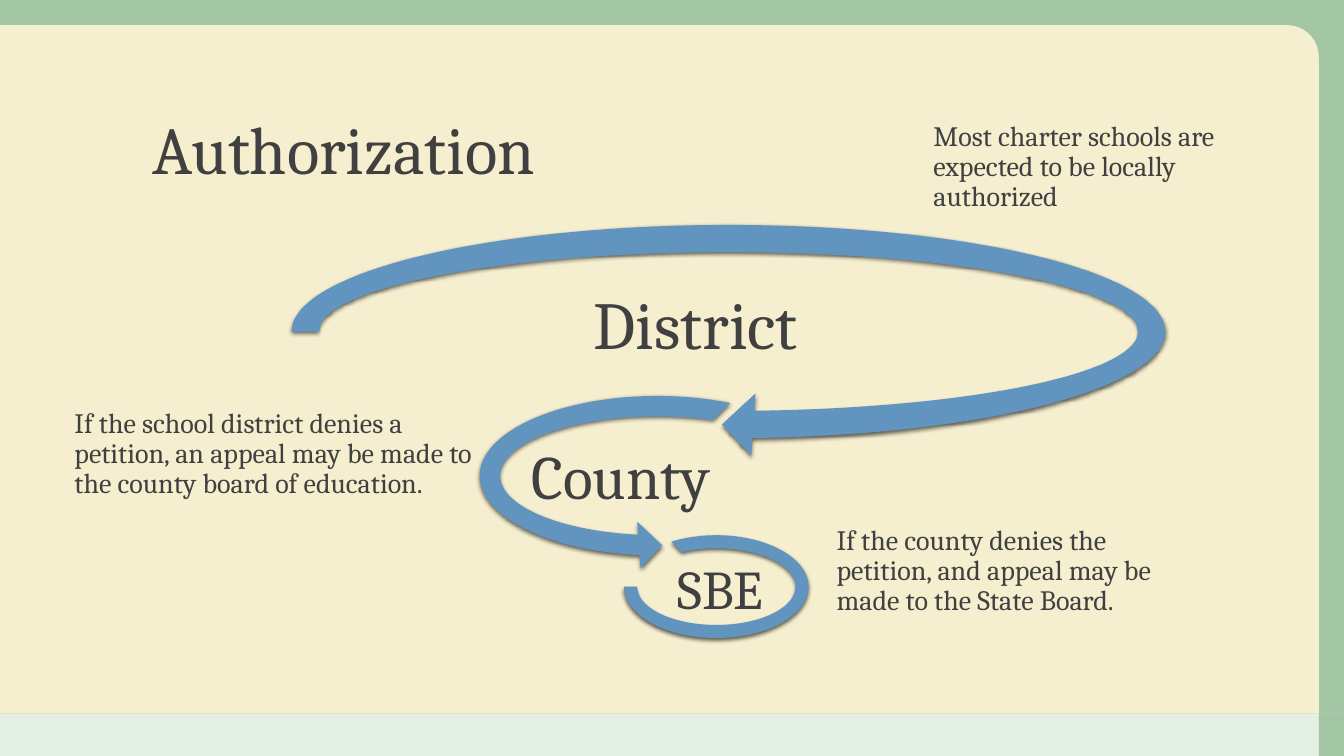
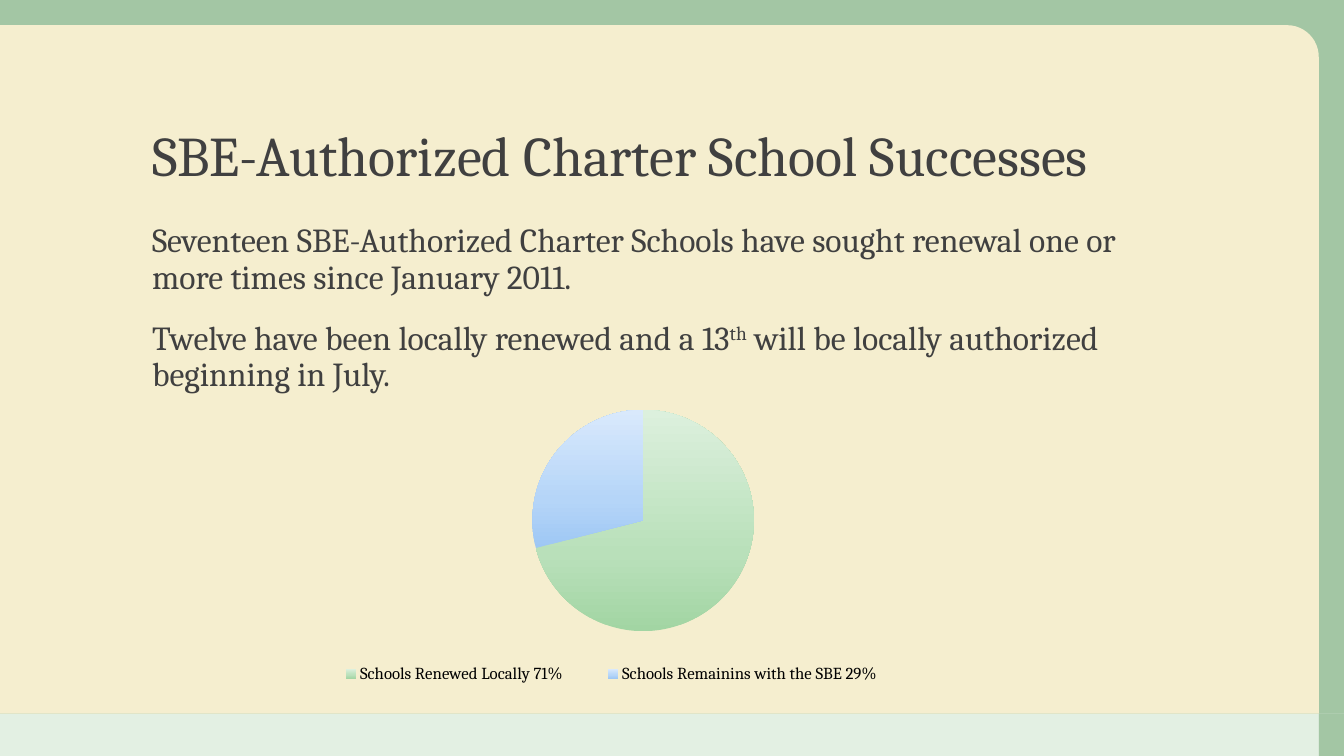
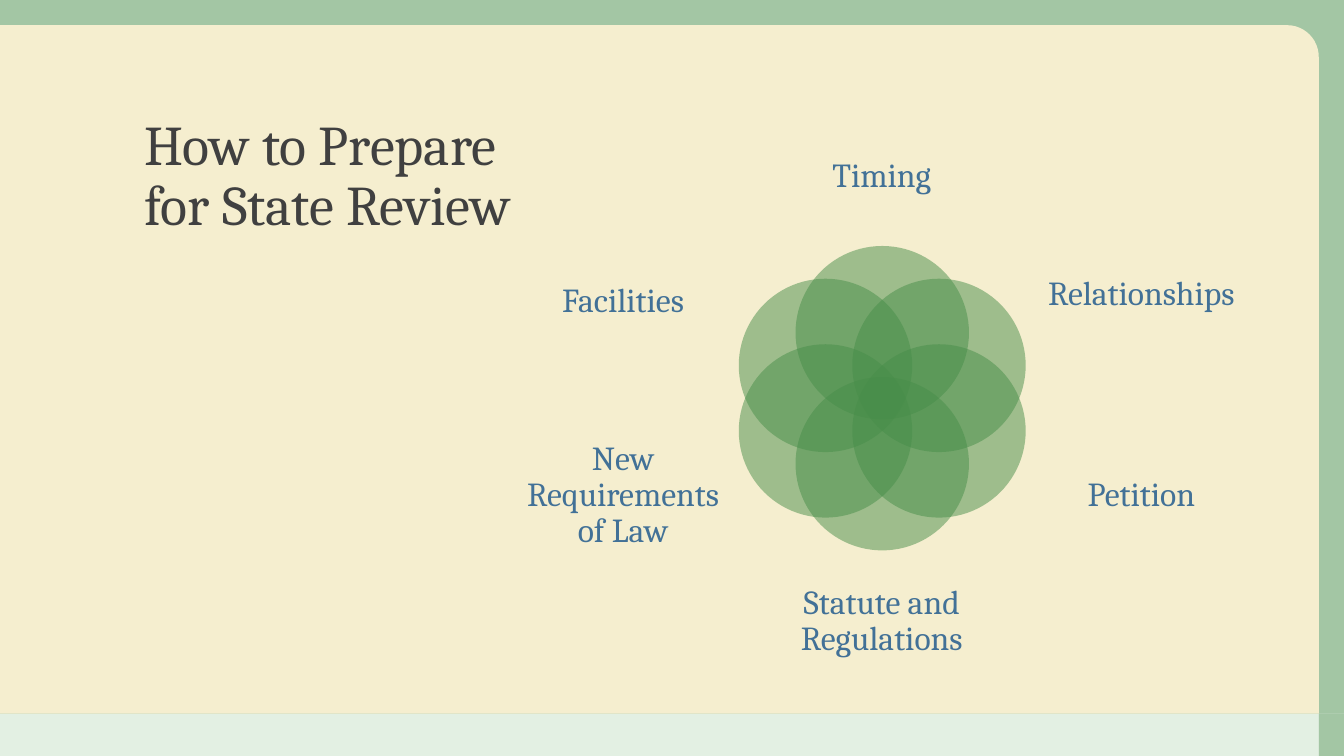
import copy
import math
from dataclasses import dataclass
from typing import Any, NamedTuple, Optional

import pptx
import pptx.chart.data
import pptx.dml.color
import pptx.enum.chart
import pptx.enum.shapes
import pptx.enum.text
import pptx.oxml
import pptx.oxml.ns
import pptx.util

Inches = pptx.util.Inches
Pt = pptx.util.Pt
RGB = pptx.dml.color.RGBColor
qn = pptx.oxml.ns.qn
Preset = pptx.enum.shapes.MSO_SHAPE
Anchor = pptx.enum.text.MSO_ANCHOR
Align = pptx.enum.text.PP_ALIGN
NAMESPACES = pptx.oxml.ns.nsdecls("a")


@dataclass(frozen=True)
class Theme:
    font: str = "Cambria"
    ink: str = "404040"
    label: str = "427197"
    arrow: str = "6195C0"
    green: str = "488E4A"
    mint: str = "D8EBD8"
    paper: str = "F5EECF"
    legend: str = "000000"
    renewed: tuple[str, ...] = ("A2D5A3", "B9E0BA", "DCF0DD")
    remaining: tuple[str, ...] = ("9EC7F4", "B5D5F8", "D9E9FC")
    title_large: float = 48
    title: float = 40
    body: float = 24
    note: float = 20
    legend_size: float = 12
    line_spacing: float = 0.9


THEME = Theme()


class Box(NamedTuple):
    left: float
    top: float
    width: float
    height: float

    def lengths(self) -> tuple[int, ...]:
        return tuple(Inches(side) for side in self)


class Panel(NamedTuple):
    preset: Any
    box: Box
    colour: str
    opacity: int = 100
    adjustments: tuple[float, ...] = ()


class Caption(NamedTuple):
    text: str
    box: Box
    size: float


class Step(NamedTuple):
    sweep: Panel
    name: Caption


FRAME = (
    Panel(Preset.RECTANGLE, Box(0, 7.08, 13.08, 0.42), THEME.mint, 70),
    Panel(Preset.RECTANGLE, Box(13.08, 7.08, 0.25, 0.42), THEME.green, 50),
    Panel(Preset.RECTANGLE, Box(0, 0, 13.33, 7.08), THEME.green, 50),
    Panel(Preset.ROUND_1_RECTANGLE, Box(0, 0.25, 13.08, 6.83), THEME.paper, 100, (0.046,)),
)

STEPS = (
    Step(
        Panel(Preset.CIRCULAR_ARROW, Box(2.72, 2.06, 9.01, 2.46), THEME.arrow,
              adjustments=(0.11, 11.423, 45, 108, 0.125)),
        Caption("District", Box(5.79, 2.78, 2.22, 0.95), 48),
    ),
    Step(
        Panel(Preset.LEFT_CIRCULAR_ARROW, Box(4.63, 3.8, 3.78, 1.84), THEME.arrow,
              adjustments=(0.11, 11.423, 63, 189, 0.125)),
        Caption("County", Box(5.02, 4.36, 2.28, 0.79), 44),
    ),
    Step(
        Panel(Preset.BLOCK_ARC, Box(6.19, 5.31, 1.83, 1.02), THEME.arrow,
              adjustments=(135, 108, 0.127)),
        Caption("SBE", Box(6.51, 5.55, 1.27, 0.64), 39),
    ),
)

NOTES = (
    Caption("If the school district denies a petition, an appeal may be made to "
            "the county board of education.", Box(0.64, 4.01, 4.17, 1.37), THEME.note),
    Caption("If the county denies the petition, and appeal may be made to the State Board.",
            Box(8.2, 5.17, 3.83, 1.01), THEME.note),
    Caption("Most charter schools are expected to be locally authorized",
            Box(9.16, 1.16, 3.5, 1.01), THEME.note),
)

TOPICS = (
    Caption("Timing", Box(7.67, 1.17, 2.15, 1.17), THEME.body),
    Caption("Relationships", Box(10.3, 2.28, 2.04, 1.28), THEME.body),
    Caption("Petition", Box(10.3, 4.2, 2.04, 1.43), THEME.body),
    Caption("Statute and Regulations", Box(7.67, 5.58, 2.15, 1.17), THEME.body),
    Caption("New Requirements of Law", Box(5.16, 4.2, 2.04, 1.43), THEME.body),
    Caption("Facilities", Box(5.16, 2.28, 2.04, 1.43), THEME.body),
)


def style_paragraph(paragraph: Any, size: float, colour: str) -> None:
    paragraph.line_spacing = THEME.line_spacing
    paragraph.font.name = THEME.font
    paragraph.font.size = Pt(size)
    paragraph.font.color.rgb = RGB.from_string(colour)


def add_panel(slide: Any, panel: Panel) -> Any:
    shape = slide.shapes.add_shape(panel.preset, *panel.box.lengths())
    shape.shadow.inherit = False
    shape.line.fill.background()
    shape.fill.solid()
    shape.fill.fore_color.rgb = RGB.from_string(panel.colour)
    for index, value in enumerate(panel.adjustments):
        shape.adjustments[index] = value
    if panel.opacity < 100:
        colour = next(shape._element.spPr.iter(qn("a:srgbClr")))
        colour.append(pptx.oxml.parse_xml(
            f'<a:alpha {NAMESPACES} val="{panel.opacity * 1000}"/>'))
    return shape


def add_drop_shadow(shape: Any) -> None:
    effects = shape._element.spPr.find(qn("a:effectLst"))
    effects.append(pptx.oxml.parse_xml(
        f'<a:outerShdw {NAMESPACES} blurRad="{Pt(3)}" dist="{Pt(1.5)}" dir="5400000" '
        'rotWithShape="0"><a:srgbClr val="000000"><a:alpha val="60000"/>'
        '</a:srgbClr></a:outerShdw>'))


def add_caption(slide: Any, caption: Caption, colour: str = THEME.ink,
                anchor: Any = Anchor.TOP, align: Any = Align.LEFT,
                inset: Optional[float] = None) -> Any:
    frame = slide.shapes.add_textbox(*caption.box.lengths()).text_frame
    frame.word_wrap = True
    frame.vertical_anchor = anchor
    if inset is not None:
        frame.margin_left = frame.margin_right = Inches(inset)
        frame.margin_top = frame.margin_bottom = Inches(inset)
    paragraph = frame.paragraphs[0]
    paragraph.text = caption.text
    paragraph.alignment = align
    style_paragraph(paragraph, caption.size, colour)
    return frame


def start_slide(deck: Any, title: Caption) -> Any:
    slide = deck.slides.add_slide(deck.slide_layouts[6])
    for panel in FRAME:
        add_panel(slide, panel)
    add_caption(slide, title, anchor=Anchor.BOTTOM)
    return slide


def build_authorization(deck: Any) -> None:
    slide = start_slide(
        deck, Caption("Authorization", Box(1.41, 0.59, 10.5, 1.33), THEME.title_large))
    for step in STEPS:
        add_drop_shadow(add_panel(slide, step.sweep))
        add_caption(slide, step.name, anchor=Anchor.MIDDLE, align=Align.CENTER, inset=0.03)
    for note in NOTES:
        add_caption(slide, note)


def set_layout(part: Any, box: Box, inner: bool = False) -> None:
    for old in part.findall(qn("c:layout")):
        part.remove(old)
    target = '<c:layoutTarget val="inner"/>' if inner else ""
    modes = '<c:xMode val="edge"/><c:yMode val="edge"/>'
    sides = "".join(f'<c:{tag} val="{value}"/>' for tag, value in zip("xywh", box))
    layout = pptx.oxml.parse_xml(
        f'<c:layout {pptx.oxml.ns.nsdecls("c")}><c:manualLayout>{target}{modes}{sides}'
        '</c:manualLayout></c:layout>')
    position = part.find(qn("c:legendPos"))
    part.insert(0 if position is None else part.index(position) + 1, layout)


def fill_slice(chart: Any, index: int, colours: tuple[str, ...]) -> None:
    fill = chart.plots[0].series[0].points[index].format.fill
    fill.gradient()
    fill.gradient_angle = 90
    stops = list(chart._chartSpace.iter(qn("a:gsLst")))[-1]
    stops.insert(1, copy.deepcopy(stops[0]))
    for stop, position, colour in zip(fill.gradient_stops, (0, 0.35, 1), colours):
        stop.position = position
        stop.color.rgb = RGB.from_string(colour)


def add_renewal_chart(slide: Any) -> None:
    renewals = pptx.chart.data.CategoryChartData()
    renewals.categories = ["Schools Renewed Locally 71%", "Schools Remainins with the SBE 29%"]
    renewals.add_series("Series 1", (71, 29))
    chart = slide.shapes.add_chart(
        pptx.enum.chart.XL_CHART_TYPE.PIE, *Box(2.41, 3.66, 7.86, 3.38).lengths(),
        renewals).chart
    chart.has_title = False
    chart.plots[0].vary_by_categories = True
    chart.has_legend = True
    chart.legend.position = pptx.enum.chart.XL_LEGEND_POSITION.BOTTOM
    chart.legend.include_in_layout = False
    for font, size, colour in (
        (chart.font, 10, THEME.ink),
        (chart.legend.font, THEME.legend_size, THEME.legend),
    ):
        font.name = THEME.font
        font.size = Pt(size)
        font.color.rgb = RGB.from_string(colour)
    for index, colours in enumerate((THEME.renewed, THEME.remaining)):
        fill_slice(chart, index, colours)
    plot_area = next(chart._chartSpace.iter(qn("c:plotArea")))
    set_layout(plot_area, Box(0.12, 0.12, 0.77, 0.65), inner=True)
    set_layout(chart.legend._element, Box(0.08, 0.85, 0.77, 0.09))


def build_successes(deck: Any) -> None:
    slide = start_slide(
        deck, Caption("SBE-Authorized Charter School Successes",
                      Box(1.41, 0.62, 10.5, 1.3), THEME.title))
    body = add_caption(slide, Caption(
        "Seventeen SBE-Authorized Charter Schools have sought renewal one or more times "
        "since January 2011.", Box(1.41, 2.17, 10.5, 4.58), THEME.body))
    renewed = body.add_paragraph()
    renewed.space_before = Pt(18)
    style_paragraph(renewed, THEME.body, THEME.ink)
    for text, baseline in (
        ("Twelve have been locally renewed and a 13", 0),
        ("th", 30000),
        (" will be locally authorized beginning in July.", 0),
    ):
        run = renewed.add_run()
        run.text = text
        if baseline:
            run._r.get_or_add_rPr().set("baseline", str(baseline))
    add_renewal_chart(slide)


def build_preparation(deck: Any) -> None:
    slide = start_slide(
        deck, Caption("How to Prepare for State Review", Box(1.33, 1, 4.42, 1.41), THEME.title))
    centre_x, centre_y, orbit, diameter = 8.75, 3.95, 0.65, 1.72
    for index, topic in enumerate(TOPICS):
        angle = math.tau * index / len(TOPICS)
        petal = Box(centre_x + orbit * math.sin(angle) - diameter / 2,
                    centre_y - orbit * math.cos(angle) - diameter / 2, diameter, diameter)
        add_panel(slide, Panel(Preset.OVAL, petal, THEME.green, 50))
        add_caption(slide, topic, THEME.label, Anchor.MIDDLE, Align.CENTER, 0)


def main() -> None:
    deck = pptx.Presentation()
    deck.slide_width = Inches(13.33)
    deck.slide_height = Inches(7.5)
    build_authorization(deck)
    build_successes(deck)
    build_preparation(deck)
    deck.save("out.pptx")


if __name__ == "__main__":
    main()
